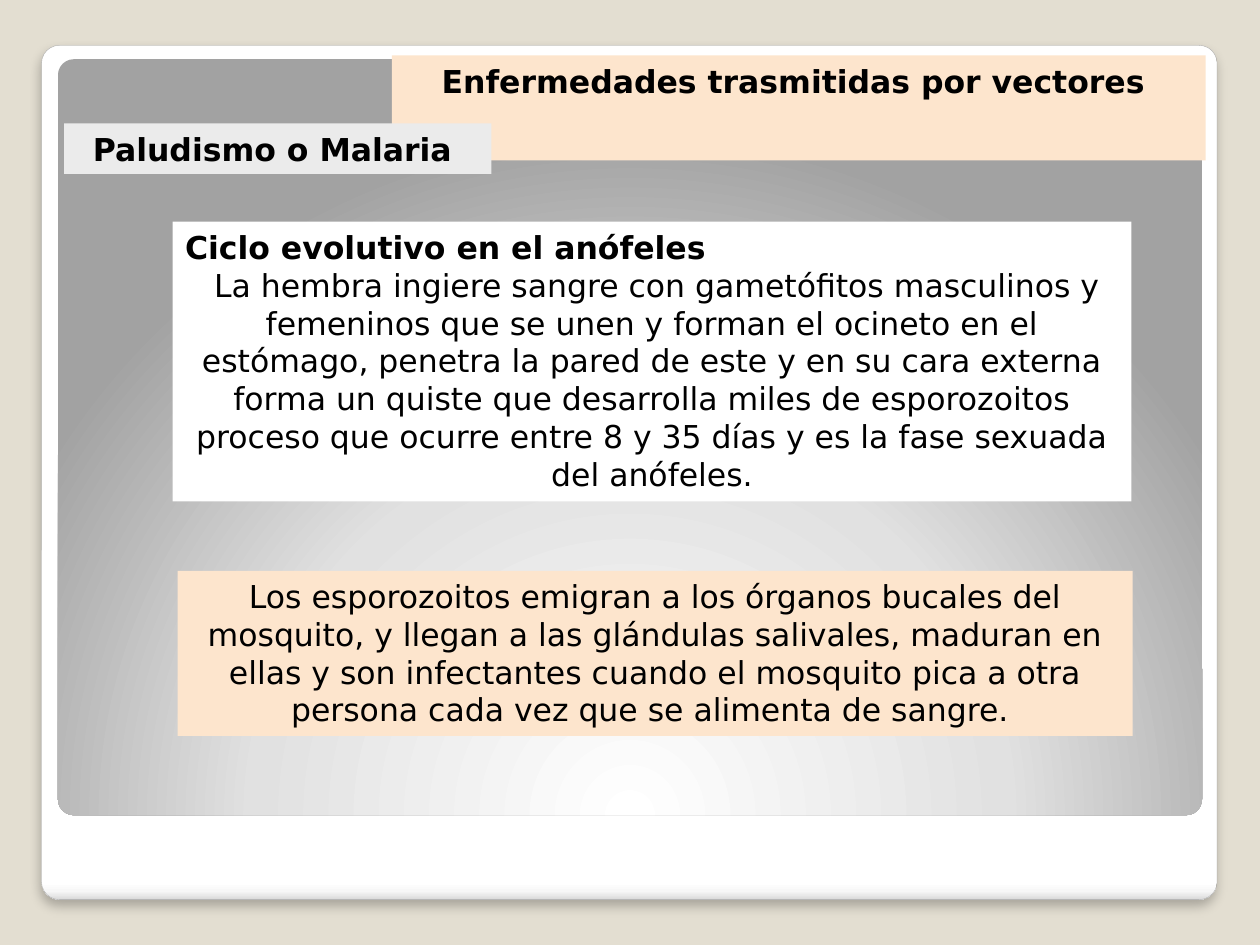
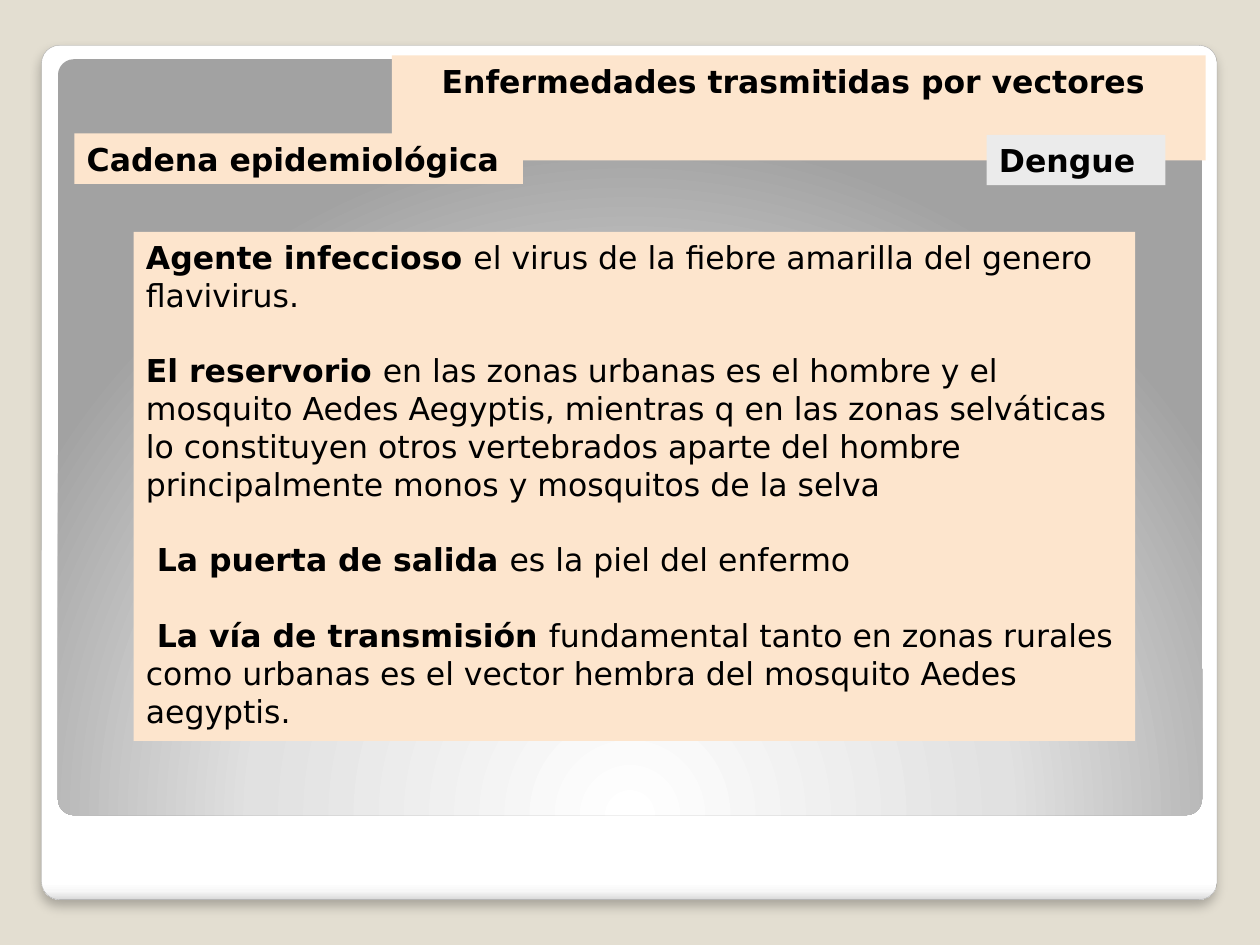
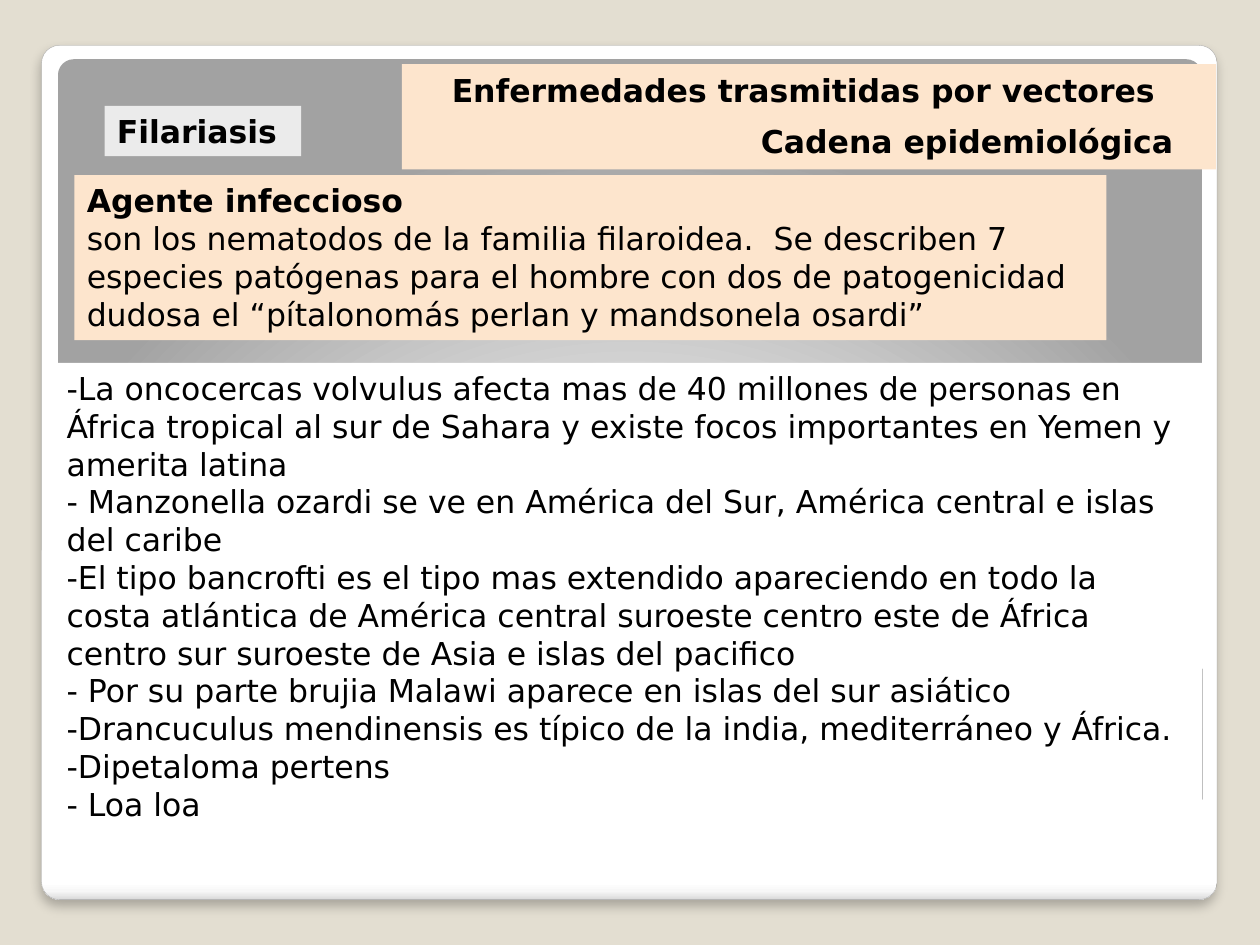
"""Build three slides on vector-borne diseases."""
from dataclasses import dataclass

from pptx import Presentation, oxml
from pptx import util as u
from pptx.dml.color import RGBColor
from pptx.enum import shapes, text
from pptx.oxml import ns

BEIGE = RGBColor(0xE3, 0xDE, 0xD1)
PEACH = RGBColor(0xFD, 0xE5, 0xCD)
LIGHT_GRAY = RGBColor(0xEB, 0xEB, 0xEB)
EDGE_GRAY = RGBColor(0xA4, 0xA4, 0xA4)
WHITE = RGBColor(0xFF, 0xFF, 0xFF)
BLACK = RGBColor(0, 0, 0)

LEFT, CENTER = text.PP_ALIGN.LEFT, text.PP_ALIGN.CENTER
LINE_HEIGHT = u.Pt(21.6)
FONT_FORMAT = {"name": "DejaVu Sans", "size": u.Pt(18)}
FRAME_FORMAT = {
    "word_wrap": True,
    "auto_size": text.MSO_AUTO_SIZE.SHAPE_TO_FIT_TEXT,
    "vertical_anchor": text.MSO_ANCHOR.TOP,
    "margin_left": u.Inches(0.1),
    "margin_right": u.Inches(0.1),
    "margin_top": u.Inches(0.05),
    "margin_bottom": u.Inches(0.05),
}
TITLE = "Enfermedades trasmitidas por vectores "
CHAIN = "Cadena epidemiológica"


@dataclass(frozen=True)
class Passage:
    """A paragraph with an optional bold lead."""
    lead: str = ""
    body: str = ""
    align: text.PP_ALIGN = LEFT


@dataclass(frozen=True)
class Box:
    """A filled text area with its place in inches."""
    place: tuple[float, float, float, float]
    fill: RGBColor
    passages: list[Passage]
    gap: u.Length = u.Pt(0)


@dataclass(frozen=True)
class Panel:
    """A rounded background panel with a gradient."""
    place: tuple[float, float, float, float]
    stops: list[tuple[int, str]]
    direction: str


PANELS = [
    Panel((0.33, 0.36, 9.33, 6.78),
          [(0, "FFFFFF"), (98, "FFFFFF"), (99, "F7F7F7"), (100, "DADADA")],
          '<a:lin ang="5400000" scaled="0"/>'),
    Panel((0.46, 0.47, 9.08, 6),
          [(0, "FFFFFF"), (55, "E1E1E1"), (100, "A2A2A2")],
          '<a:path path="circle">'
          '<a:fillToRect l="50000" t="175000" r="50000" b="-75000"/></a:path>'),
]
SHADOW = (f'<a:effectLst {ns.nsdecls("a")}>'
          '<a:outerShdw blurRad="76200" dist="50800" dir="5400000" '
          'algn="t" rotWithShape="0"><a:srgbClr val="000000">'
          '<a:alpha val="25000"/></a:srgbClr></a:outerShdw></a:effectLst>')


def label(left: float, top: float, width: float, fill: RGBColor, words: str,
          align: text.PP_ALIGN = LEFT) -> Box:
    """Describe a one-line bold heading."""
    return Box((left, top, width, 0.4), fill, [Passage(words, align=align)])


def heading(left: float, top: float) -> Box:
    """Describe the title band."""
    return label(left, top, 6.46, PEACH, TITLE, CENTER)


SLIDES = [
    (heading(3.11, 0.44), [
        Box((1.37, 1.76, 7.61, 2.22), WHITE, [
            Passage("Ciclo evolutivo en el anófeles"),
            Passage(body=" La hembra ingiere sangre con gametófitos masculinos y femeninos "
                    "que se unen y forman el ocineto en el estómago, penetra la pared de este "
                    "y en su cara externa forma un quiste que desarrolla miles de esporozoitos "
                    "proceso que ocurre entre 8 y 35 días y es la fase sexuada del anófeles.",
                    align=CENTER)]),
        Box((1.41, 4.53, 7.58, 1.31), PEACH, [
            Passage(body="Los esporozoitos emigran a los órganos bucales del mosquito, y llegan "
                    "a las glándulas salivales, maduran en ellas y son infectantes cuando el "
                    "mosquito pica a otra persona cada vez que se alimenta de sangre. ",
                    align=CENTER)]),
        label(0.51, 0.98, 3.39, LIGHT_GRAY, "Paludismo o Malaria ", CENTER),
    ]),
    (heading(3.11, 0.44), [
        Box((1.06, 1.84, 7.95, 4.04), PEACH, [
            Passage("Agente infeccioso ",
                    "el virus de la fiebre amarilla del genero flavivirus."),
            Passage("El reservorio ",
                    "en las zonas urbanas es el hombre y el mosquito Aedes Aegyptis, mientras q "
                    "en las zonas selváticas lo constituyen otros vertebrados aparte del hombre "
                    "principalmente monos y mosquitos de la selva"),
            Passage(" La puerta de salida ", "es la piel del enfermo"),
            Passage(" La vía de transmisión ",
                    "fundamental tanto en zonas rurales como urbanas es el vector hembra del "
                    "mosquito Aedes aegyptis.")], LINE_HEIGHT),
        label(0.59, 1.06, 3.56, PEACH, CHAIN),
        label(7.83, 1.07, 1.42, LIGHT_GRAY, "Dengue"),
    ]),
    (heading(3.19, 0.51), [
        label(0.83, 0.84, 1.56, LIGHT_GRAY, "Filariasis"),
        Box((0.59, 1.39, 8.19, 1.31), PEACH, [
            Passage("Agente infeccioso"),
            Passage(body="son los nematodos de la familia filaroidea.  Se describen 7 especies "
                    "patógenas para el hombre con dos de patogenicidad dudosa el “pítalonomás "
                    "perlan y mandsonela osardi”")]),
        label(5.94, 0.92, 3.56, PEACH, CHAIN),
        Box((0.43, 2.88, 9.11, 3.74), WHITE, [Passage(body=species) for species in (
            "-La oncocercas volvulus afecta mas de 40 millones de personas en África tropical "
            "al sur de Sahara y existe focos importantes en Yemen y amerita latina",
            "- Manzonella ozardi se ve en América del Sur, América central e islas del caribe",
            "-El tipo bancrofti es el tipo mas extendido apareciendo en todo la costa atlántica "
            "de América central suroeste centro este de África centro sur suroeste de Asia e "
            "islas del pacifico",
            "- Por su parte brujia Malawi aparece en islas del sur asiático",
            "-Drancuculus mendinensis es típico de la india, mediterráneo y África.",
            "-Dipetaloma pertens",
            "- Loa loa")]),
    ]),
]


def apply(target, values: dict) -> None:
    """Set each named attribute."""
    for name, value in values.items():
        setattr(target, name, value)


def write_box(shape, box: Box) -> None:
    """Place, fill and write a text area."""
    places = map(u.Inches, box.place)
    apply(shape, dict(zip(("left", "top", "width", "height"), places)))
    shape.fill.solid()
    shape.fill.fore_color.rgb = box.fill
    frame = shape.text_frame
    apply(frame, FRAME_FORMAT)
    for index, passage in enumerate(box.passages):
        paragraph = frame.add_paragraph() if index else frame.paragraphs[0]
        apply(paragraph, {"alignment": passage.align, "line_spacing": LINE_HEIGHT,
                          "space_before": box.gap if index else u.Pt(0)})
        for words, bold in ((passage.lead, True), (passage.body, False)):
            if words:
                run = paragraph.add_run()
                run.text = words
                apply(run.font, FONT_FORMAT | {"bold": bold})
                run.font.color.rgb = BLACK


def add_backdrop(slide, layout) -> None:
    """Draw the shared panels and hand them to the layout."""
    for index, panel in enumerate(PANELS):
        shape = slide.shapes.add_shape(shapes.MSO_SHAPE.ROUNDED_RECTANGLE,
                                       *map(u.Inches, panel.place))
        shape.adjustments[0] = 0.021
        shape.shadow.inherit = False
        shape.line.fill.background()
        stops = "".join(f'<a:gs pos="{position * 1000}"><a:srgbClr val="{color}"/></a:gs>'
                        for position, color in panel.stops)
        properties = shape._element.spPr
        properties.find(ns.qn("a:prstGeom")).addnext(oxml.parse_xml(
            f'<a:gradFill {ns.nsdecls("a")} rotWithShape="1"><a:gsLst>{stops}</a:gsLst>'
            f'{panel.direction}</a:gradFill>'))
        if index == 0:
            shape.line.color.rgb = EDGE_GRAY
            shape.line.width = u.Pt(0.16)
            properties.replace(properties.find(ns.qn("a:effectLst")),
                               oxml.parse_xml(SHADOW))
        shape._element.nvSpPr.cNvPr.set("id", str(100 + index))
        layout.shapes._spTree.insert(2 + index, shape._element)


def main() -> None:
    """Build and save the presentation."""
    deck = Presentation()
    deck.slide_width, deck.slide_height = u.Inches(10), u.Inches(7.5)
    backdrop = deck.slide_master.background.fill
    backdrop.solid()
    backdrop.fore_color.rgb = BEIGE
    layout = deck.slide_layouts.get_by_name("Title Only")
    for number, (title, boxes) in enumerate(SLIDES):
        slide = deck.slides.add_slide(layout)
        if number == 0:
            add_backdrop(slide, layout)
        write_box(slide.shapes.title, title)
        for box in boxes:
            write_box(slide.shapes.add_textbox(*map(u.Inches, box.place)), box)
    deck.save("out.pptx")


if __name__ == "__main__":
    main()
